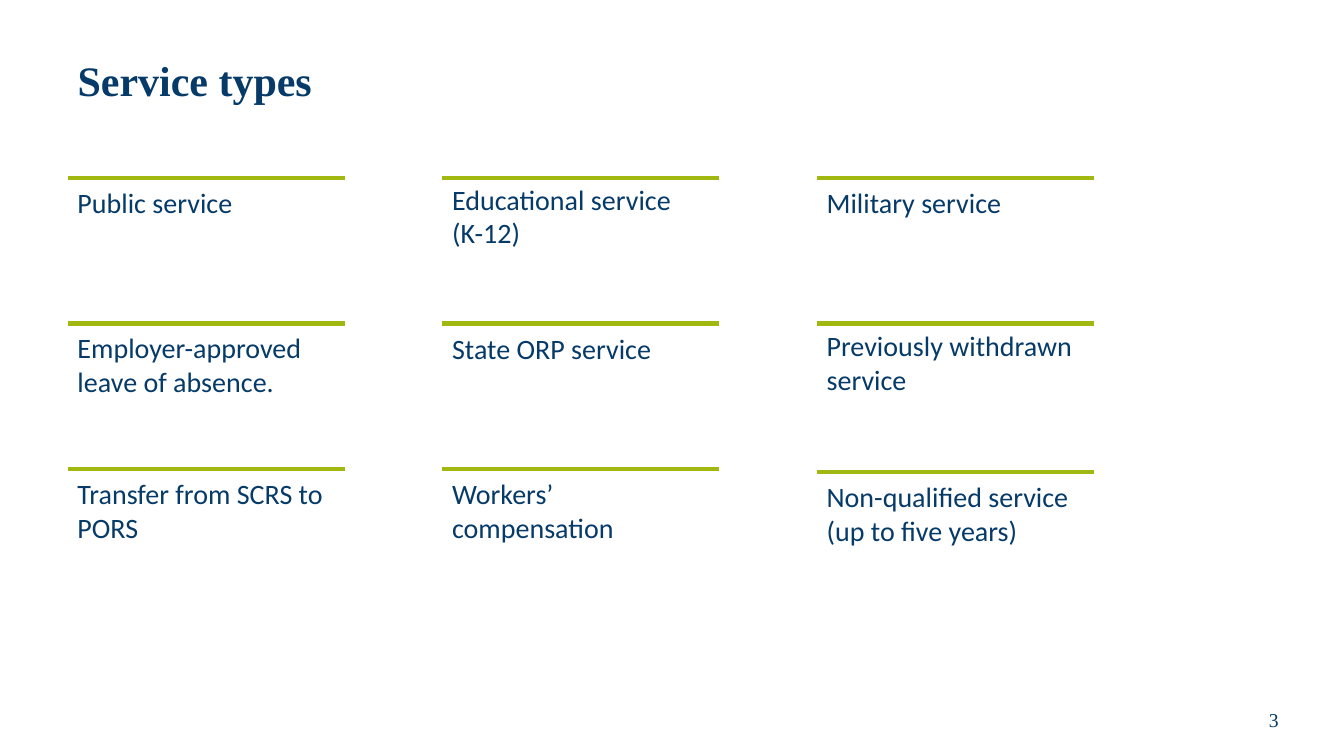
from lxml.etree import SubElement
from pptx import Presentation
from pptx.dml.color import RGBColor
from pptx.enum.shapes import MSO_CONNECTOR
from pptx.enum.text import MSO_ANCHOR, PP_ALIGN
from pptx.oxml.ns import qn
from pptx.util import Inches, Pt

COLORS = {"navy": "063A68", "green": "A0B810"}
LEFT, TOP = 0.67, 1.77
COL_PITCH, ROW_PITCH = 3.715, 1.44
CELL_W, CELL_H = 2.75, 0.77

# Each entry: label, gap from rule to text box, shift of the whole cell
SERVICE_ROWS = [
    [("Public service", 0.02, 0),
     ("Educational service (K-12)", -0.01, 0),
     ("Military service", 0.02, 0)],
    [("Employer-approved leave of absence.", 0.02, 0),
     ("State ORP service", 0.03, 0),
     ("Previously withdrawn service", 0, 0)],
    [("Transfer from SCRS to PORS", 0.03, 0),
     ("Workers’ compensation", 0.03, 0),
     ("Non-qualified service (up to five years)", 0.03, 0.03)],
]


def write(sp, text, size=20, font="Calibri", bold=False, align=PP_ALIGN.LEFT,
          anchor=MSO_ANCHOR.TOP, spacing=None):
    tf = sp.text_frame
    tf.word_wrap = True
    tf.vertical_anchor = anchor
    p = tf.paragraphs[0]
    p.alignment = align
    p.line_spacing = spacing
    r = p.add_run()
    r.text = text
    r.font.size = Pt(size)
    r.font.name = font
    r.font.bold = bold
    r.font.color.rgb = RGBColor.from_string(COLORS["navy"])


def add_rule(shapes, x, y):
    line = shapes.add_connector(MSO_CONNECTOR.STRAIGHT, Inches(x), Inches(y),
                                Inches(x + CELL_W), Inches(y))
    line.line.color.rgb = RGBColor.from_string(COLORS["green"])
    line.line.width = Pt(3)
    SubElement(line._element.spPr, qn("a:effectLst"))


def add_service(shapes, x, y, label, gap):
    sp = shapes.add_textbox(Inches(x), Inches(y + gap), Inches(CELL_W), Inches(CELL_H))
    write(sp, label)
    add_rule(shapes, x, y)


def add_title(slide, text):
    sp = slide.shapes.title
    sp.left, sp.top = Inches(LEFT), Inches(0.25)
    sp.width, sp.height = Inches(12), Inches(1.15)
    write(sp, text, size=30, font="Times New Roman", bold=True,
          anchor=MSO_ANCHOR.MIDDLE, spacing=0.9)


def add_page_number(slide, number):
    sp = slide.shapes.add_textbox(Inches(12.05), Inches(6.89), Inches(1.17), Inches(0.5))
    write(sp, number, size=14, font="Times New Roman", align=PP_ALIGN.CENTER,
          anchor=MSO_ANCHOR.MIDDLE)


def main():
    prs = Presentation()
    prs.slide_width, prs.slide_height = Inches(13.33), Inches(7.5)
    slide = prs.slides.add_slide(prs.slide_layouts[5])
    add_title(slide, "Service types")
    for row, services in enumerate(SERVICE_ROWS):
        group = slide.shapes.add_group_shape()
        for col, (label, gap, shift) in enumerate(services):
            add_service(group.shapes, LEFT + col * COL_PITCH,
                        TOP + row * ROW_PITCH + shift, label, gap)
    add_page_number(slide, "3")
    prs.save("out.pptx")


if __name__ == "__main__":
    main()
